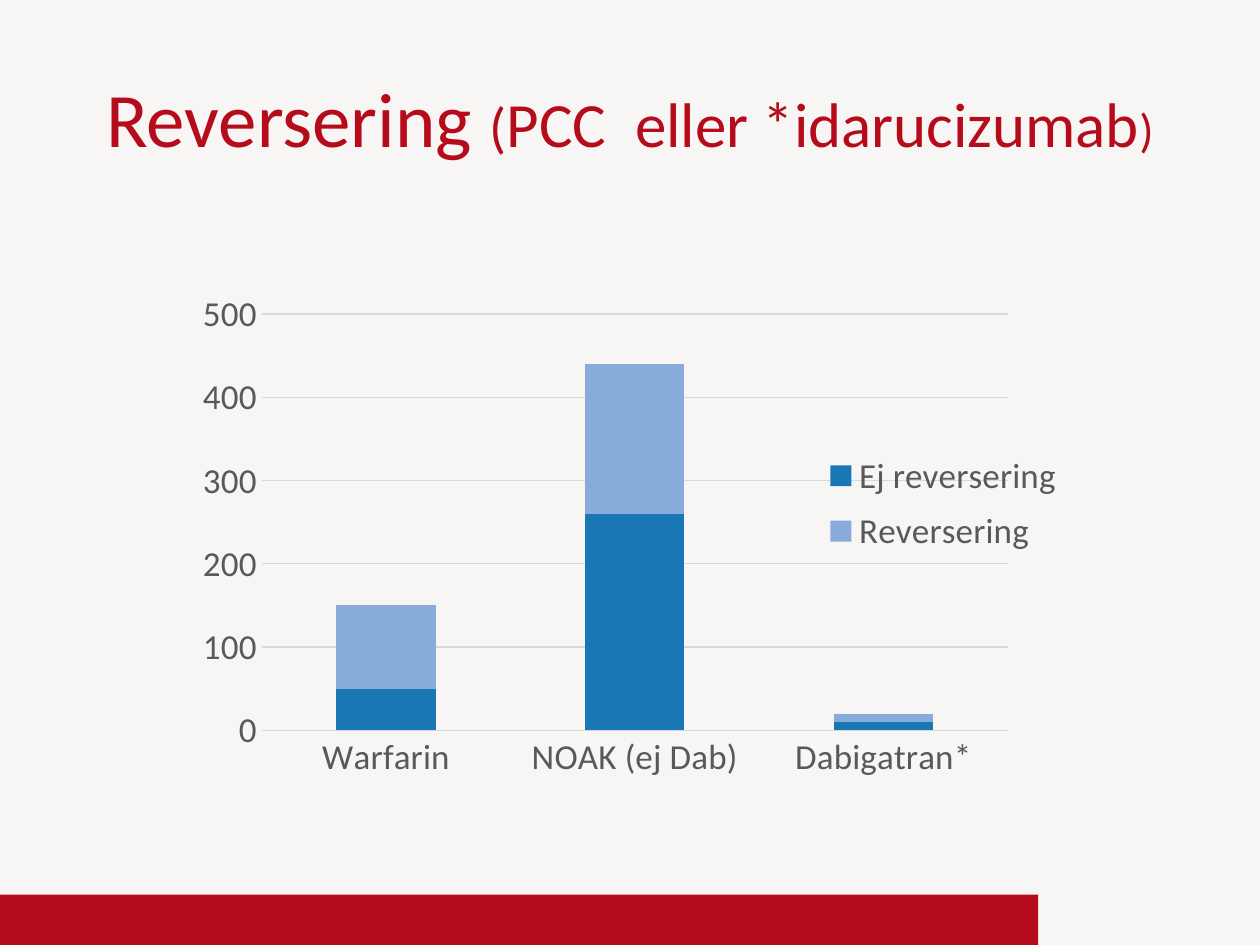
from lxml.etree import SubElement
from pptx import Presentation
from pptx.chart.data import CategoryChartData
from pptx.dml.color import RGBColor
from pptx.enum.chart import XL_CHART_TYPE as ChartType, XL_LEGEND_POSITION as LegendPosition
from pptx.enum.chart import XL_TICK_MARK as TickMark
from pptx.enum.shapes import MSO_SHAPE as Shape
from pptx.enum.text import MSO_ANCHOR as Anchor, MSO_AUTO_SIZE as AutoSize, PP_ALIGN as Align
from pptx.oxml.ns import qn
from pptx.util import Inches, Pt


def color(value):
    return RGBColor.from_string(value)


def format_font(font, size, shade, name="Calibri"):
    font.name = name
    font.size = Pt(size)
    font.bold = False
    font.color.rgb = color(shade)


def add_text(para, text, **style):
    span = para.add_run()
    span.text = text
    format_font(span.font, **style)


def set_layout(parent, index, **shares):
    for old in parent.findall(qn("c:layout")):
        parent.remove(old)
    layout = SubElement(parent, qn("c:layout"))
    manual = SubElement(layout, qn("c:manualLayout"))
    for key, value in shares.items():
        SubElement(manual, qn(f"c:{key}")).set("val", str(value))
    parent.insert(index, layout)


class SlideBuilder:
    red, gray, rule, backdrop = "B50B1B", "595959", "D9D9D9", "F7F6F4"
    label_size = 20
    columns, rows = 20, 15

    def __init__(self, deck):
        self.column = deck.slide_width / self.columns
        self.row = deck.slide_height / self.rows
        self.slide = deck.slides.add_slide(deck.slide_layouts[5])
        fill = self.slide.background.fill
        fill.solid()
        fill.fore_color.rgb = color(self.backdrop)

    def area(self, left, top, width, height):
        return (round(left * self.column), round(top * self.row),
                round(width * self.column), round(height * self.row))

    def title(self, area, spans):
        box = self.slide.shapes.title
        box.left, box.top, box.width, box.height = self.area(*area)
        frame = box.text_frame
        frame.auto_size = AutoSize.NONE
        frame.vertical_anchor = Anchor.MIDDLE
        para = frame.paragraphs[0]
        para.alignment = Align.CENTER
        for text, size in spans:
            add_text(para, text, size=size, shade=self.red)

    def bar(self, area):
        bar = self.slide.shapes.add_shape(Shape.RECTANGLE, *self.area(*area))
        bar.shadow.inherit = False
        bar.fill.solid()
        bar.fill.fore_color.rgb = color(self.red)
        bar.line.fill.background()

    def rule_line(self, line):
        line.color.rgb = color(self.rule)
        line.width = Pt(0.75)

    def stacked_chart(self, area, categories, series):
        data = CategoryChartData()
        data.categories = categories
        for name, values, _ in series:
            data.add_series(name, values)
        chart = self.slide.shapes.add_chart(
            ChartType.COLUMN_STACKED, *self.area(*area), data).chart
        chart.has_title = False
        format_font(chart.font, 10, "000000")
        plot = chart.plots[0]
        plot.gap_width, plot.overlap, plot.vary_by_categories = 150, 100, False
        for item, (_, _, shade) in zip(plot.series, series):
            item.format.fill.solid()
            item.format.fill.fore_color.rgb = color(shade)
        for axis in (chart.category_axis, chart.value_axis):
            axis.major_tick_mark = axis.minor_tick_mark = TickMark.NONE
            format_font(axis.tick_labels.font, self.label_size, self.gray)
        self.rule_line(chart.category_axis.format.line)
        value_axis = chart.value_axis
        value_axis.minimum_scale, value_axis.maximum_scale, value_axis.major_unit = 0, 500, 100
        value_axis.format.line.fill.background()
        self.rule_line(value_axis.major_gridlines.format.line)
        self.legend(chart)
        plot_area = chart.element.find(f".//{qn('c:plotArea')}")
        set_layout(plot_area, 0, layoutTarget="inner", xMode="edge", yMode="edge",
                   x=0.09, y=0.04, w=0.81, h=0.78)

    def legend(self, chart):
        chart.has_legend = True
        legend = chart.legend
        legend.position = LegendPosition.BOTTOM
        legend.include_in_layout = False
        format_font(legend.font, self.label_size, self.gray)
        element = chart.element.find(f".//{qn('c:legend')}")
        set_layout(element, 1, xMode="edge", yMode="edge", x=0.69, y=0.28, w=0.28, h=0.23)


def main():
    deck = Presentation()
    deck.slide_width, deck.slide_height = Inches(10), Inches(7.5)
    page = SlideBuilder(deck)
    page.bar((0, 14.2, 16.48, 0.8))
    page.title((1, 0.6, 18, 2.5), [
        ("Reversering ", 44), ("(", 32), ("PCC  eller *idarucizumab", 36), (")", 27)])
    page.stacked_chart(
        (2.84, 4.64, 14.62, 8.48),
        ["Warfarin", "NOAK (ej Dab)", "Dabigatran*"],
        [("Ej reversering", (50, 260, 10), "1A77B6"),
         ("Reversering", (100, 180, 10), "88ACDA")])
    deck.save("out.pptx")


if __name__ == "__main__":
    main()
